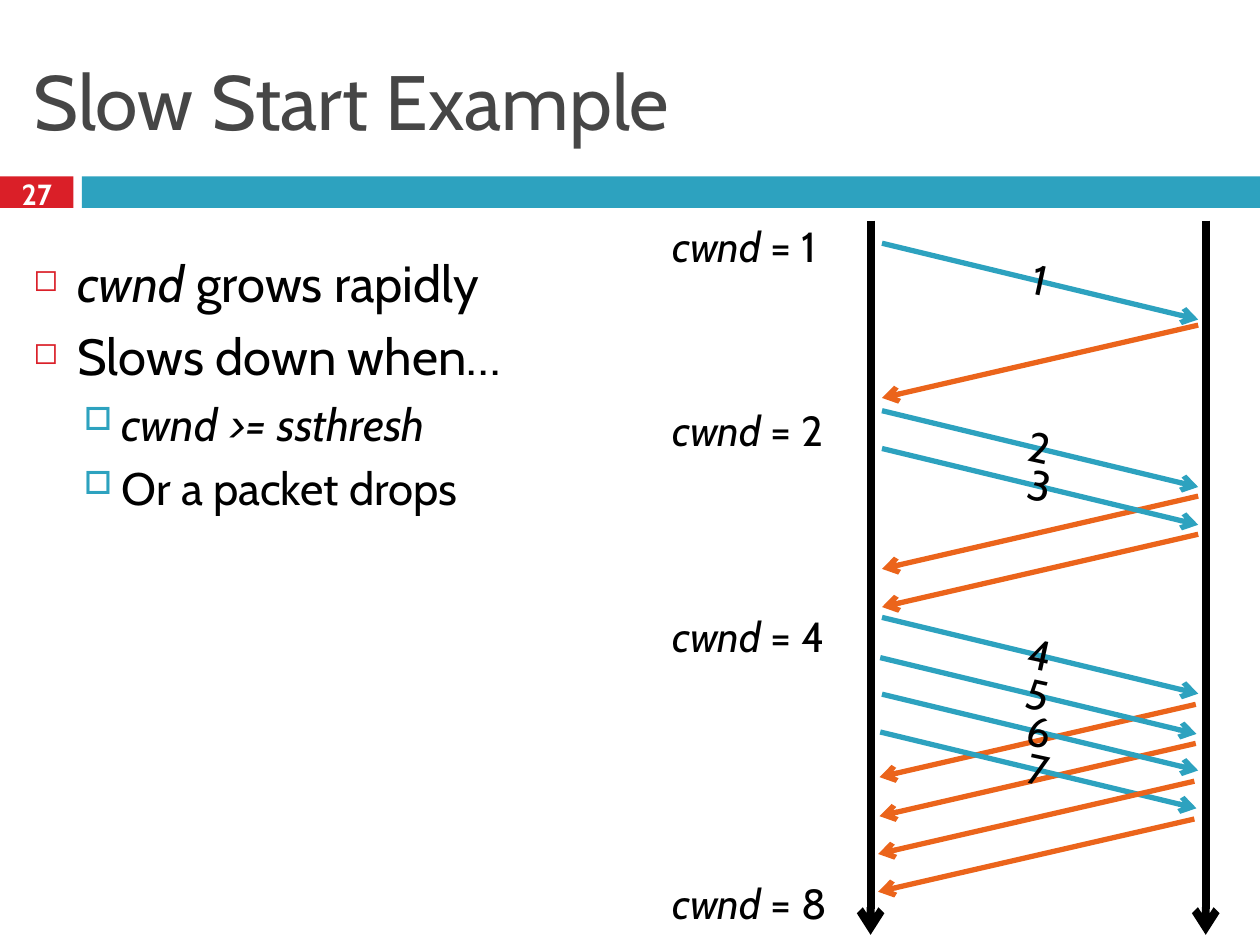
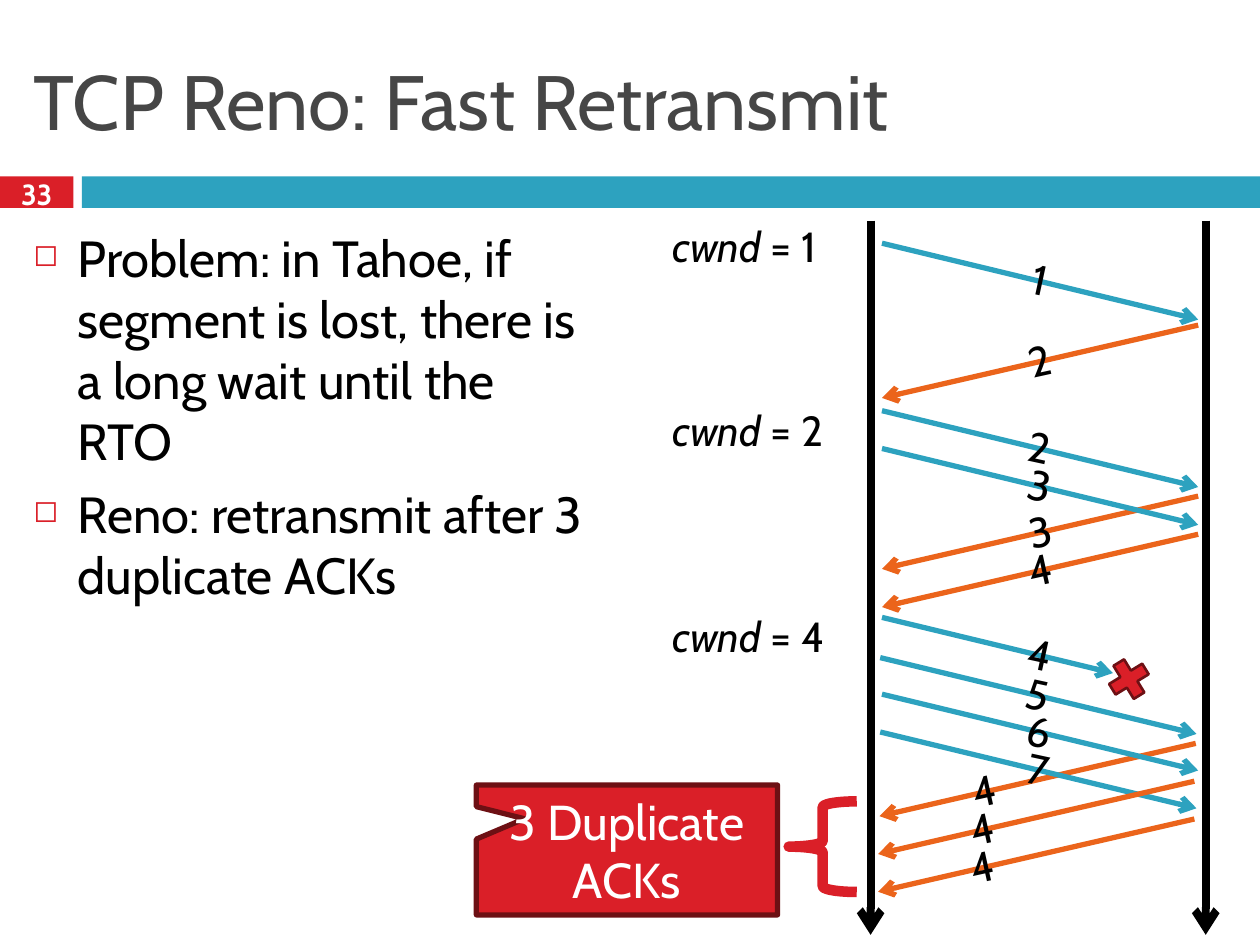
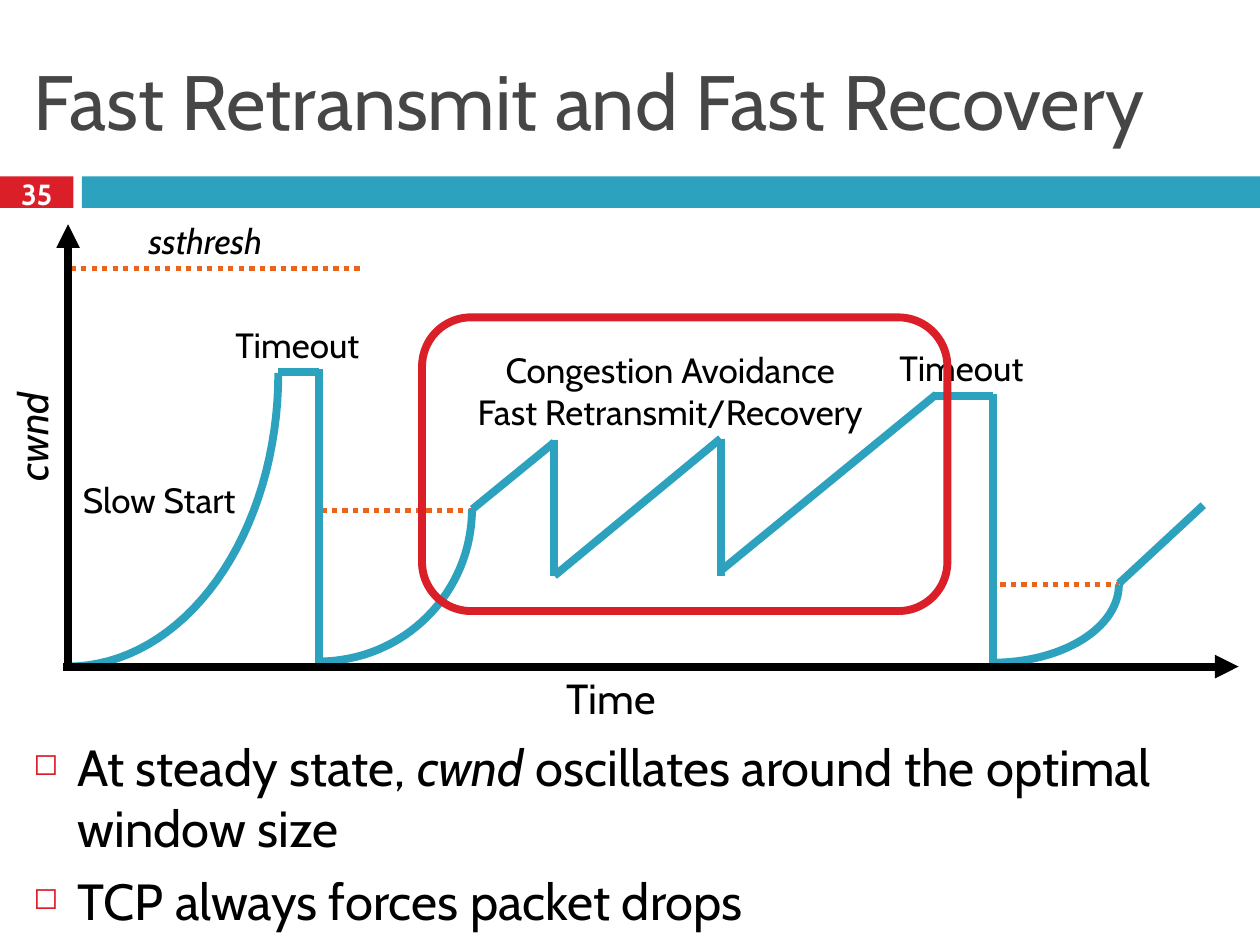
from dataclasses import dataclass
from math import cos, pi, sin
from typing import NamedTuple, Optional

from lxml import etree
from pptx import Presentation
from pptx.dml.color import RGBColor
from pptx.enum.dml import MSO_LINE
from pptx.enum.shapes import MSO_CONNECTOR, MSO_SHAPE
from pptx.enum.text import MSO_ANCHOR, MSO_AUTO_SIZE, PP_ALIGN
from pptx.oxml.ns import qn
from pptx.util import Pt


@dataclass(frozen=True)
class Theme:
    font: str = "Cabin"
    black: str = "000000"
    white: str = "FFFFFF"
    gray: str = "464646"
    red: str = "DA1F28"
    dark_red: str = "6D1014"
    blue: str = "2DA2BF"
    orange: str = "EB641B"
    title_size: float = 44
    number_size: float = 16.6
    callout_size: float = 28
    label_size: float = 24
    note_size: float = 20
    thin: float = 3
    thick: float = 4.5


THEME = Theme()


class Box(NamedTuple):
    left: float
    top: float
    width: float
    height: float

    def lengths(self) -> list:
        return [Pt(value) for value in self]


class Segment(NamedTuple):
    """A straight line between two points."""
    x1: float
    y1: float
    x2: float
    y2: float


class BulletStyle(NamedTuple):
    symbol: str
    color: str
    percent: int
    size: float
    left: float
    hanging: float
    space_before: float


class Bullet(NamedTuple):
    text: str
    level: int = 0


BULLET_STYLES = [
    BulletStyle("◻", THEME.red, 60, 29, 25.2, 25.2, 7),
    BulletStyle("□", THEME.blue, 70, 26, 50.4, 21.6, 5.5),
]


@dataclass(frozen=True)
class Packet:
    """A message between the two timelines; fractions run along its path."""
    top: float
    label: str = ""
    shift: float = 0
    is_ack: bool = False
    label_at: float = 0.5
    reach: float = 1

    def point(self, fraction: float) -> tuple[float, float]:
        if self.is_ack:
            return ACK_LEFT + FLIGHT * (1 - fraction) + self.shift, self.top + ACK_DROP * fraction
        return ACK_LEFT + FLIGHT * fraction + self.shift, self.top + DATA_DROP * fraction


ACK_LEFT, FLIGHT = 504, 180.7
DATA_DROP, ACK_DROP = 43.6, 41.6
DATA_TILT, ACK_TILT = 12.3, 347.5
TIMELINES = (497.5, 689)


def write_text(frame, text: str, *, size: float, color: str = THEME.black, bold: bool = False,
               align=PP_ALIGN.LEFT, anchor=MSO_ANCHOR.TOP, wrap: bool = True,
               fit=MSO_AUTO_SIZE.NONE) -> None:
    """Fill a text frame; newlines part paragraphs and *stars* mark italics."""
    frame.word_wrap = wrap
    frame.auto_size = fit
    frame.vertical_anchor = anchor
    for index, line in enumerate(text.split("\n")):
        paragraph = frame.paragraphs[0] if index == 0 else frame.add_paragraph()
        paragraph.alignment = align
        write_runs(paragraph, line, size, color, bold)


def write_runs(paragraph, text: str, size: float, color: str, bold: bool = False) -> None:
    for index, part in enumerate(text.split("*")):
        if part:
            run = paragraph.add_run()
            run.text = part
            run.font.name = THEME.font
            run.font.size = Pt(size)
            run.font.bold = bold
            run.font.italic = index % 2 == 1
            run.font.color.rgb = RGBColor.from_string(color)


def add_label(slide, text: str, box: Box, rotation: float = 0, **text_format) -> None:
    shape = slide.shapes.add_textbox(*box.lengths())
    text_format.setdefault("fit", MSO_AUTO_SIZE.SHAPE_TO_FIT_TEXT)
    write_text(shape.text_frame, text, **text_format)
    shape.rotation = rotation


def add_bullets(slide, box: Box, bullets: list[Bullet]) -> None:
    frame = slide.shapes.add_textbox(*box.lengths()).text_frame
    frame.word_wrap = True
    for index, bullet in enumerate(bullets):
        style = BULLET_STYLES[bullet.level]
        paragraph = frame.paragraphs[0] if index == 0 else frame.add_paragraph()
        paragraph.level = bullet.level
        paragraph.space_before = Pt(style.space_before)
        properties = paragraph._p.get_or_add_pPr()
        properties.set("marL", str(Pt(style.left)))
        properties.set("indent", str(-Pt(style.hanging)))
        color = etree.SubElement(properties, qn("a:buClr"))
        etree.SubElement(color, qn("a:srgbClr"), val=style.color)
        etree.SubElement(properties, qn("a:buSzPct"), val=str(style.percent * 1000))
        etree.SubElement(properties, qn("a:buChar"), char=style.symbol)
        write_runs(paragraph, bullet.text, style.size, THEME.black)


def style_shape(shape, fill: Optional[str], line: Optional[str], width: float = 0) -> None:
    shape.shadow.inherit = False
    if fill:
        shape.fill.solid()
        shape.fill.fore_color.rgb = RGBColor.from_string(fill)
    else:
        shape.fill.background()
    if line:
        shape.line.color.rgb = RGBColor.from_string(line)
        shape.line.width = Pt(width)
    else:
        shape.line.fill.background()


def add_shape(slide, kind, box: Box, fill: Optional[str] = None,
              line: Optional[str] = None, width: float = 0):
    shape = slide.shapes.add_shape(kind, *box.lengths())
    style_shape(shape, fill, line, width)
    return shape


def add_line(slide, segment: Segment, color: str, width: float,
             arrow: str = "", dotted: bool = False) -> None:
    connector = slide.shapes.add_connector(
        MSO_CONNECTOR.STRAIGHT, *[Pt(value) for value in segment])
    connector.line.color.rgb = RGBColor.from_string(color)
    connector.line.width = Pt(width)
    if dotted:
        connector.line.dash_style = MSO_LINE.ROUND_DOT
    properties = connector.element.spPr
    if arrow:
        etree.SubElement(properties.find(qn("a:ln")), qn("a:tailEnd"), type=arrow)
    etree.SubElement(properties, qn("a:effectLst"))


def add_growth_curve(slide, box: Box, steps: int = 32) -> None:
    """Draw the lower right quarter of an ellipse centred on the box's top left corner."""
    angles = [pi / 2 * step / steps for step in range(steps + 1)]
    points = [(Pt(box.left + box.width * cos(angle)), Pt(box.top + box.height * sin(angle)))
              for angle in angles]
    builder = slide.shapes.build_freeform(*points[0])
    builder.add_line_segments(points[1:], close=False)
    style_shape(builder.convert_to_shape(), None, THEME.blue, THEME.thick)


def add_titled_slide(presentation, title: str, number: int):
    slide = presentation.slides.add_slide(presentation.slide_layouts[5])
    add_shape(slide, MSO_SHAPE.RECTANGLE, Box(0, 100.8, 42, 18), THEME.red)
    add_shape(slide, MSO_SHAPE.RECTANGLE, Box(46.8, 100.8, 673.2, 18), THEME.blue)
    placeholder = slide.shapes.title
    placeholder.left, placeholder.top, placeholder.width, placeholder.height = \
        Box(12, 18, 696, 78).lengths()
    write_text(placeholder.text_frame, title, size=THEME.title_size, color=THEME.gray,
               anchor=MSO_ANCHOR.MIDDLE)
    add_label(slide, str(number), Box(0, 98.6, 42, 24), size=THEME.number_size,
              color=THEME.white, bold=True, align=PP_ALIGN.CENTER,
              anchor=MSO_ANCHOR.MIDDLE, fit=MSO_AUTO_SIZE.NONE)
    return slide


def add_packet(slide, packet: Packet) -> None:
    color = THEME.orange if packet.is_ack else THEME.blue
    add_line(slide, Segment(*packet.point(0), *packet.point(packet.reach)),
             color, THEME.thin, "arrow")
    if packet.label:
        x, y = packet.point(packet.label_at)
        add_label(slide, packet.label, Box(x - 40, y - 19.2, 80, 36.4),
                  ACK_TILT if packet.is_ack else DATA_TILT,
                  size=THEME.label_size, align=PP_ALIGN.CENTER)


def add_exchange(slide, packets: list[Packet], windows: dict[int, float]) -> None:
    """Draw both timelines, the packets and the window sizes with their tops."""
    for x in TIMELINES:
        add_line(slide, Segment(x, 126, x, 534.2), THEME.black, THEME.thick, "arrow")
    for packet in packets:
        add_packet(slide, packet)
    for window, top in windows.items():
        add_label(slide, f"*cwnd* = {window}", Box(377.3, top, 112.3, 36.4),
                  size=THEME.label_size, wrap=False)


def data_packets(lost: str = "") -> list[Packet]:
    tops = (139, 234.7, 256.3, 352.8, 375.8, 396.7, 418.3)
    return [Packet(top, str(number), shift=-1 if number in (5, 7) else 0,
                   reach=0.73 if str(number) == lost else 1)
            for number, top in enumerate(tops, 1)]


EARLY_ACKS = (185.8, 283.5, 305.3)
LATE_ACKS = ((424.8, -1.4), (446.4, -2.2), (468, -2.2))
WINDOWS = {1: 122.4, 2: 227.5, 4: 345.6}


def build_slow_start(presentation) -> None:
    slide = add_titled_slide(presentation, "Slow Start Example", 27)
    late = [Packet(top, shift=shift, is_ack=True) for top, shift in LATE_ACKS]
    early = [Packet(top, is_ack=True) for top in EARLY_ACKS]
    fourth = Packet(402.5, shift=-1.4, is_ack=True)
    add_exchange(slide, [*early, fourth, late[0], *data_packets(), *late[1:]],
                 WINDOWS | {8: 498.2})
    add_bullets(slide, Box(12, 140.4, 332.6, 387.4), [
        Bullet("*cwnd* grows rapidly"),
        Bullet("Slows down when…"),
        Bullet("*cwnd >= ssthresh*", 1),
        Bullet("Or a packet drops", 1),
    ])


def build_fast_retransmit(presentation) -> None:
    slide = add_titled_slide(presentation, "TCP Reno: Fast Retransmit", 33)
    add_bullets(slide, Box(12, 126, 338.4, 401.8), [
        Bullet("Problem: in Tahoe, if segment is lost, there is a long wait until the RTO"),
        Bullet("Reno: retransmit after 3 duplicate ACKs"),
    ])
    early = [Packet(top, str(number), is_ack=True)
             for number, top in enumerate(EARLY_ACKS, 2)]
    duplicates = [Packet(top, "4", shift, is_ack=True, label_at=0.67)
                  for top, shift in LATE_ACKS]
    add_exchange(slide, [*early, duplicates[0], *data_packets(lost="4"), *duplicates[1:]],
                 WINDOWS)
    loss_mark = add_shape(slide, MSO_SHAPE.MATH_MULTIPLY, Box(630, 373, 30.2, 30.2),
                          THEME.red, THEME.dark_red, 1.5)
    loss_mark.rotation = 13.5
    add_shape(slide, MSO_SHAPE.LEFT_BRACE, Box(450.7, 457.9, 38.9, 51.8),
              line=THEME.red, width=6)
    callout = add_shape(slide, MSO_SHAPE.RECTANGULAR_CALLOUT, Box(272.2, 448.6, 172.1, 74.2),
                        THEME.red, THEME.dark_red, THEME.thin)
    callout.adjustments[0], callout.adjustments[1] = -0.34, -0.24
    write_text(callout.text_frame, "3 Duplicate ACKs", size=THEME.callout_size,
               color=THEME.white, align=PP_ALIGN.CENTER, anchor=MSO_ANCHOR.MIDDLE)


def build_fast_recovery(presentation) -> None:
    slide = add_titled_slide(presentation, "Fast Retransmit and Fast Recovery", 35)
    add_bullets(slide, Box(12, 416.9, 696, 123.1), [
        Bullet("At steady state, *cwnd* oscillates around the optimal window size"),
        Bullet("TCP always forces packet drops"),
    ])
    thresholds = [(40.3, 208.1, 153.4), (183.6, 270.7, 291.6), (571.7, 639.4, 334.1)]
    for left, right, y in thresholds:
        add_line(slide, Segment(left, y, right, y), THEME.orange, THEME.thin, dotted=True)

    for box in (Box(38.9, 213.1, 120.2, 167.8), Box(182.2, 290.9, 87.5, 87.1),
                Box(567.4, 334.1, 72, 44.6)):
        add_growth_curve(slide, box)
    window_changes = [
        Segment(159.1, 212.4, 182.2, 212.4),
        Segment(182.2, 211, 182.2, 378.7),
        Segment(270, 290.9, 316.8, 252.7),
        Segment(316.8, 251.3, 316.8, 329),
        Segment(316.8, 329, 411.8, 250.6),
        Segment(411.8, 250.6, 411.8, 329),
        Segment(411.8, 326.2, 535, 225.4),
        Segment(533.5, 226.1, 567.4, 226.1),
        Segment(567.4, 225.4, 567.4, 380.9),
        Segment(639.4, 333.4, 687.6, 288.7),
    ]
    for segment in window_changes:
        add_line(slide, segment, THEME.blue, THEME.thick)
    for axis in (Segment(38.9, 380.9, 38.9, 128.2), Segment(36, 380.9, 707.8, 380.9)):
        add_line(slide, axis, THEME.black, THEME.thick, "triangle")

    add_label(slide, "Time", Box(316.8, 380.9, 67.7, 36.4), size=THEME.label_size, wrap=False)
    add_label(slide, "*cwnd*", Box(-17.3, 228.2, 71.3, 36.4), 270,
              size=THEME.label_size, wrap=False)
    notes = [
        ("Timeout", Box(127.4, 181.4, 87.1, 31.5)),
        ("Timeout", Box(506.9, 194.4, 87.1, 31.5)),
        ("Slow Start", Box(40.3, 270, 106.6, 31.5)),
        ("*ssthresh*", Box(77.8, 121.7, 90.7, 31.5)),
    ]
    for text, box in notes:
        add_label(slide, text, box, size=THEME.note_size, wrap=False)
    add_label(slide, "Congestion Avoidance\nFast Retransmit/Recovery",
              Box(247.7, 195.8, 270.7, 55.7), size=THEME.note_size, align=PP_ALIGN.CENTER)
    add_shape(slide, MSO_SHAPE.ROUNDED_RECTANGLE, Box(241.2, 181.4, 300.2, 167.8),
              line=THEME.red, width=THEME.thick)


def main() -> None:
    presentation = Presentation()
    presentation.slide_width, presentation.slide_height = Pt(720), Pt(540)
    build_slow_start(presentation)
    build_fast_retransmit(presentation)
    build_fast_recovery(presentation)
    presentation.save("out.pptx")


if __name__ == "__main__":
    main()
